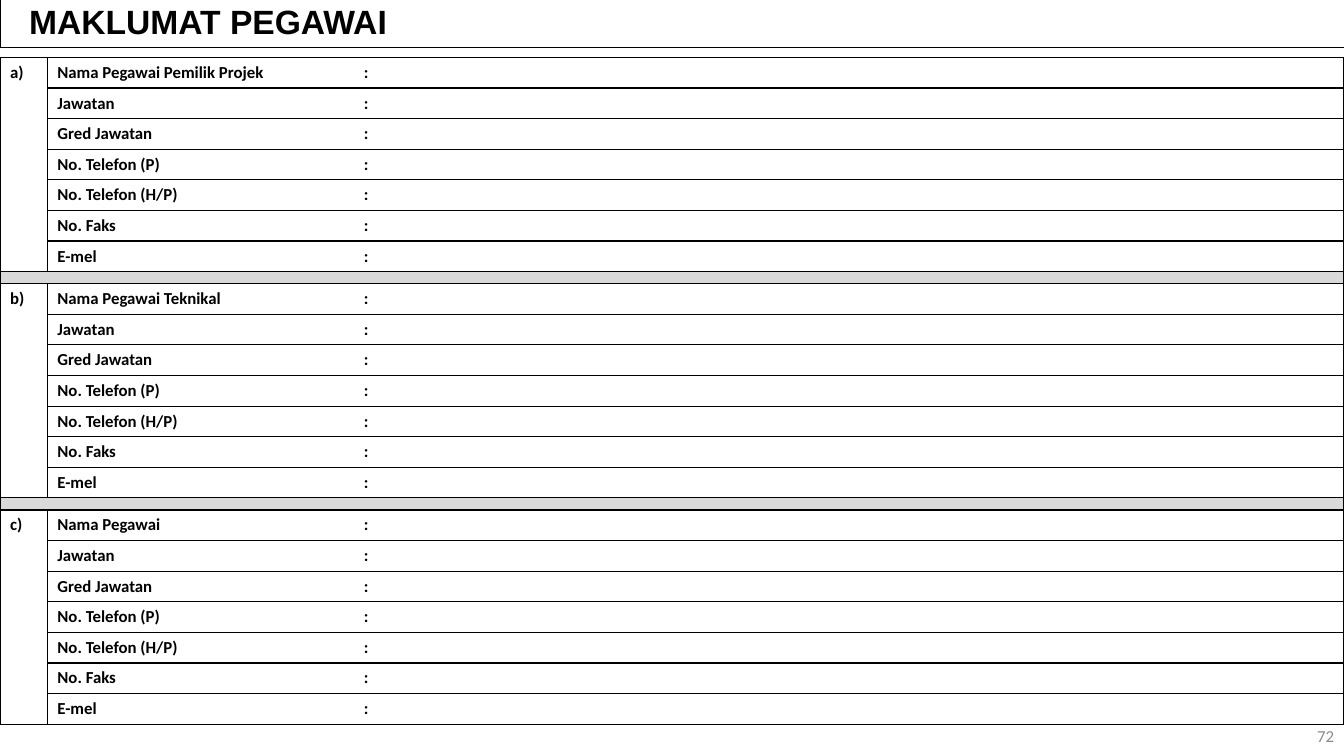
from dataclasses import dataclass

from lxml import etree
from pptx import Presentation
from pptx.dml.color import RGBColor
from pptx.enum.shapes import MSO_SHAPE
from pptx.enum.text import MSO_ANCHOR, PP_ALIGN
from pptx.oxml.ns import qn
from pptx.util import Inches, Pt

RECT = MSO_SHAPE.RECTANGLE
MIDDLE = MSO_ANCHOR.MIDDLE
LEFT, RIGHT = PP_ALIGN.LEFT, PP_ALIGN.RIGHT

BLACK, GREY, BAND = "000000", "8C8C8C", "D9D9D9"
COL_WIDTHS = (0.47, 3.04, 0.31, 9.51)
ROW_H, BAND_H = 0.3, 0.12
FIELDS = ("Jawatan", "Gred Jawatan", "No. Telefon (P)", "No. Telefon (H/P)",
          "No. Faks", "E-mel")


@dataclass
class Officer:
    mark: str
    name_label: str


OFFICERS = (
    Officer("a)", "Nama Pegawai Pemilik Projek"),
    Officer("b)", "Nama Pegawai Teknikal"),
    Officer("c)", "Nama Pegawai"),
)


def rgb(value: str) -> RGBColor:
    return RGBColor.from_string(value)


def add_run(p, text: str, size: float, font: str, color: str, bold: bool = False) -> None:
    r = p.add_run()
    r.text = text
    r.font.size, r.font.name, r.font.bold = Pt(size), font, bold
    r.font.color.rgb = rgb(color)


def set_borders(cell, sides: str) -> None:
    """Draw black 1 pt lines on the sides named by L, R, T and B; none elsewhere."""
    tcPr = cell._tc.get_or_add_tcPr()
    for i, side in enumerate("LRTB"):
        ln = etree.Element(qn(f"a:ln{side}"), w=str(Pt(1)))
        if side in sides:
            fill = etree.SubElement(ln, qn("a:solidFill"))
            etree.SubElement(fill, qn("a:srgbClr"), val=BLACK)
        else:
            etree.SubElement(ln, qn("a:noFill"))
        tcPr.insert(i, ln)


def fill_cell(cell, text: str, sides: str, size: float = 12) -> None:
    cell.vertical_anchor = MIDDLE
    cell.fill.background()
    set_borders(cell, sides)
    p = cell.text_frame.paragraphs[0]
    if text:
        add_run(p, text, size, "Calibri", BLACK, True)
    else:
        etree.SubElement(p._p, qn("a:endParaRPr"), sz=str(int(size * 100)))


def add_title(s) -> None:
    sp = s.shapes.add_shape(RECT, 0, 0, Inches(13.35), Inches(0.47))
    sp.shadow.inherit = False
    sp.fill.background()
    sp.line.color.rgb = rgb(BLACK)
    sp.line.width = Pt(0.75)
    tf = sp.text_frame
    tf.word_wrap = True
    tf.vertical_anchor = MIDDLE
    p = tf.paragraphs[0]
    p.alignment = LEFT
    p.line_spacing = 0.9
    p._p.get_or_add_pPr().set("indent", str(Inches(0.19)))
    add_run(p, "MAKLUMAT PEGAWAI", 24, "Arial", BLACK, True)


def add_band(table, row: int) -> None:
    table.rows[row].height = Inches(BAND_H)
    cells = list(table.rows[row].cells)
    for cell in cells:
        fill_cell(cell, "", "LRTB", 1)
        cell.fill.solid()
        cell.fill.fore_color.rgb = rgb(BAND)
    cells[0].merge(cells[-1])


def add_officer(table, top: int, officer: Officer) -> None:
    labels = (officer.name_label, *FIELDS)
    for i, label in enumerate(labels):
        row = table.rows[top + i]
        row.height = Inches(ROW_H)
        first, last = i == 0, i == len(labels) - 1
        mark_sides = "LR" + "T" * first + "B" * last
        texts = (officer.mark if first else "", label, ":", "")
        for cell, text, sides in zip(row.cells, texts, (mark_sides, "LTB", "TB", "RTB")):
            fill_cell(cell, text, sides)


def add_officer_table(s) -> None:
    block = len(FIELDS) + 2
    n_rows = block * len(OFFICERS) - 1
    table = s.shapes.add_table(n_rows, len(COL_WIDTHS), 0, Inches(0.57),
                               Inches(13.33), Inches(6.56)).table
    table.first_row = table.horz_banding = False
    for col, width in zip(table.columns, COL_WIDTHS):
        col.width = Inches(width)
    for i, officer in enumerate(OFFICERS):
        if i:
            add_band(table, i * block - 1)
        add_officer(table, i * block, officer)


def add_page_number(s) -> None:
    tf = s.shapes.add_textbox(Inches(10.33), Inches(7.1), Inches(3), Inches(0.4)).text_frame
    tf.word_wrap = True
    tf.vertical_anchor = MIDDLE
    p = tf.paragraphs[0]
    p.alignment = RIGHT
    add_run(p, "72", 12, "Calibri", GREY)


def main() -> None:
    prs = Presentation()
    prs.slide_width, prs.slide_height = Inches(13.33), Inches(7.5)
    s = prs.slides.add_slide(prs.slide_layouts[6])
    add_title(s)
    add_officer_table(s)
    add_page_number(s)
    prs.save("out.pptx")


if __name__ == "__main__":
    main()
